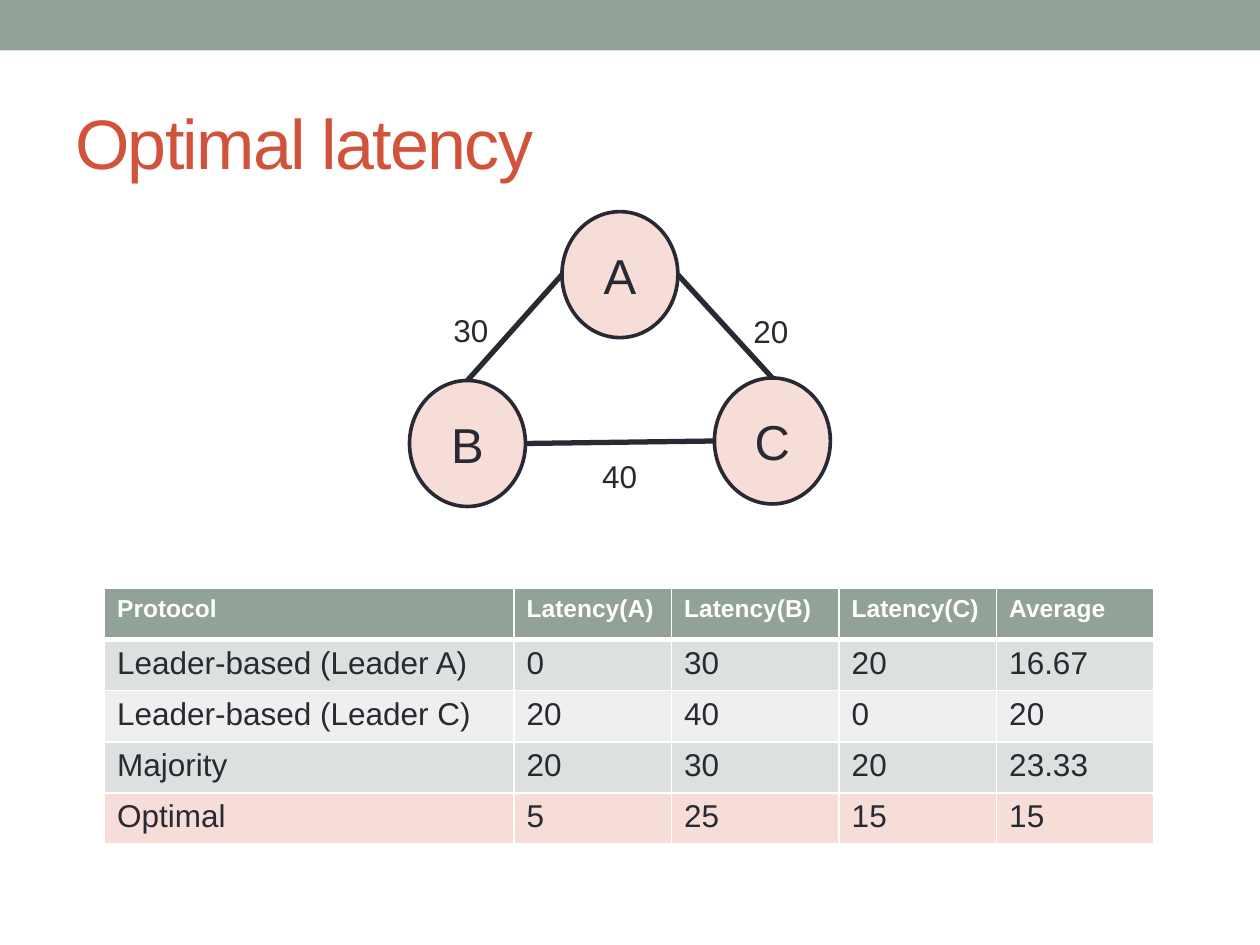
from collections import namedtuple
from dataclasses import dataclass

from lxml import etree
from pptx import Presentation
from pptx.dml.color import RGBColor
from pptx.enum.shapes import MSO_CONNECTOR, MSO_SHAPE
from pptx.enum.text import MSO_ANCHOR, MSO_AUTO_SIZE, PP_ALIGN
from pptx.oxml.ns import qn
from pptx.util import Inches, Pt

RECTANGLE, ELLIPSE = MSO_SHAPE.RECTANGLE, MSO_SHAPE.OVAL
STRAIGHT = MSO_CONNECTOR.STRAIGHT
MIDDLE, TOP = MSO_ANCHOR.MIDDLE, MSO_ANCHOR.TOP
LEFT, CENTER = PP_ALIGN.LEFT, PP_ALIGN.CENTER
GROW = MSO_AUTO_SIZE.SHAPE_TO_FIT_TEXT

Box = namedtuple("Box", "left top width height")


@dataclass(frozen=True)
class Theme:
    """Colours, font and point sizes of the deck."""
    font: str = "Arial"
    ink: str = "292934"
    sage: str = "93A299"
    sage_mid: str = "DCE0DE"
    sage_pale: str = "EEF0EF"
    rose: str = "F6DDD8"
    rust: str = "D2533C"
    white: str = "FFFFFF"
    title: float = 40
    node: float = 28
    body: float = 18
    header: float = 14
    outline: float = 2.08
    edge: float = 3
    grid: float = 1


THEME = Theme()

NODES = {"A": (1.21, 0), "B": (0, 1.34), "C": (2.42, 1.32)}
NODE_WIDTH, NODE_HEIGHT = 0.92, 1
SIDES = {"left": (0, 0.5), "right": (1, 0.5), "top": (0.5, 0)}
EDGES = [
    ("A", "left", "B", "top"),
    ("C", "left", "B", "right"),
    ("A", "right", "C", "top"),
]
DELAYS = [("30", 0.25, 0.74), ("20", 2.63, 0.75), ("40", 1.43, 1.9)]

COLUMNS = [3.25, 1.25, 1.33, 1.25, 1.25]
ROWS = [
    ("Protocol", "Latency(A)", "Latency(B)", "Latency(C)", "Average"),
    ("Leader-based (Leader A)", "0", "30", "20", "16.67"),
    ("Leader-based (Leader C)", "20", "40", "0", "20"),
    ("Majority", "20", "30", "20", "23.33"),
    ("Optimal", "5", "25", "15", "15"),
]
ROW_FILLS = [THEME.sage, THEME.sage_mid, THEME.sage_pale, THEME.sage_mid, THEME.rose]


def color(value):
    """Turn a hex string into a colour."""
    return RGBColor.from_string(value)


def inches(values):
    """Turn plain numbers into lengths."""
    return [Inches(value) for value in values]


def write(frame, text, size, ink=THEME.ink, bold=False, align=LEFT):
    """Put one styled run into a text frame and return its font."""
    para = frame.paragraphs[0]
    para.alignment = align
    span = para.add_run()
    span.text = text
    font = span.font
    font.name, font.size, font.bold = THEME.font, Pt(size), bold
    font.color.rgb = color(ink)
    return font


def add_filled(page, kind, box, fill):
    """Add a preset shape with a flat fill and no shadow."""
    shape = page.shapes.add_shape(kind, *inches(box))
    shape.shadow.inherit = False
    shape.fill.solid()
    shape.fill.fore_color.rgb = color(fill)
    return shape


def add_banner(page, box):
    """Draw the band along the top edge."""
    add_filled(page, RECTANGLE, box, THEME.sage).line.fill.background()


def add_title(page, box):
    """Write the slide title with tightened letter spacing."""
    frame = page.shapes.add_textbox(*inches(box)).text_frame
    frame.word_wrap = True
    frame.vertical_anchor = MIDDLE
    write(frame, "Optimal latency", THEME.title, THEME.rust)
    frame.paragraphs[0].runs[0]._r.get_or_add_rPr().set("spc", "-100")


def add_node(page, box, name):
    """Draw one replica as a labelled ellipse."""
    node = add_filled(page, ELLIPSE, box, THEME.rose)
    node.line.color.rgb = color(THEME.ink)
    node.line.width = Pt(THEME.outline)
    node.text_frame.vertical_anchor = MIDDLE
    write(node.text_frame, name, THEME.node, align=CENTER)


def side_point(box, side):
    """Find the point where an edge meets a node."""
    across, down = SIDES[side]
    return box.left + across * box.width, box.top + down * box.height


def add_edge(page, start, end):
    """Draw a straight link between two points."""
    edge = page.shapes.add_connector(STRAIGHT, *inches(start + end))
    edge.line.color.rgb = color(THEME.ink)
    edge.line.width = Pt(THEME.edge)
    etree.SubElement(edge._element.spPr, qn("a:effectLst"))


def add_delay(page, box, text):
    """Write the delay beside a link."""
    frame = page.shapes.add_textbox(*inches(box)).text_frame
    frame.word_wrap = False
    frame.auto_size = GROW
    write(frame, text, THEME.body)


def add_network(page, box):
    """Lay out the nodes, links and delays inside the box."""
    nodes = {
        name: Box(box.left + x, box.top + y, NODE_WIDTH, NODE_HEIGHT)
        for name, (x, y) in NODES.items()
    }
    for name, place in nodes.items():
        add_node(page, place, name)
    for first, exit_side, second, entry_side in EDGES:
        add_edge(page, side_point(nodes[first], exit_side),
                 side_point(nodes[second], entry_side))
    for text, x, y in DELAYS:
        add_delay(page, Box(box.left + x, box.top + y, 0.48, 0.4), text)


def set_borders(cell, top, bottom):
    """Give a cell white borders of the given top and bottom widths."""
    properties = cell._tc.get_or_add_tcPr()
    widths = {"lnL": THEME.grid, "lnR": THEME.grid, "lnT": top, "lnB": bottom}
    for position, (tag, width) in enumerate(widths.items()):
        line = etree.Element(qn(f"a:{tag}"), w=str(Pt(width)))
        fill = etree.SubElement(line, qn("a:solidFill"))
        etree.SubElement(fill, qn("a:srgbClr"), val=THEME.white)
        properties.insert(position, line)


def add_latency_table(page, box):
    """Build the table of latencies by protocol."""
    table = page.shapes.add_table(len(ROWS), len(COLUMNS), *inches(box)).table
    for column, width in zip(table.columns, COLUMNS):
        column.width = Inches(width)
    for index, (texts, fill) in enumerate(zip(ROWS, ROW_FILLS)):
        header = index == 0
        size, ink = (THEME.header, THEME.white) if header else (THEME.body, THEME.ink)
        top = THEME.edge if index == 1 else THEME.grid
        bottom = THEME.edge if header else THEME.grid
        table.rows[index].height = Inches(box.height / len(ROWS))
        for cell, text in zip(table.rows[index].cells, texts):
            cell.fill.solid()
            cell.fill.fore_color.rgb = color(fill)
            cell.vertical_anchor = TOP
            write(cell.text_frame, text, size, ink, header)
            set_borders(cell, top, bottom)


def main():
    """Build and save the slide."""
    deck = Presentation()
    deck.slide_width, deck.slide_height = Inches(10), Inches(7.5)
    page = deck.slides.add_slide(deck.slide_layouts[6])
    add_banner(page, Box(0, 0, 10, 0.4))
    add_title(page, Box(0.5, 0.58, 9, 1.08))
    add_network(page, Box(3.25, 1.68, 3.34, 2.34))
    add_latency_table(page, Box(0.83, 4.67, 8.33, 2.03))
    deck.save("out.pptx")


if __name__ == "__main__":
    main()
